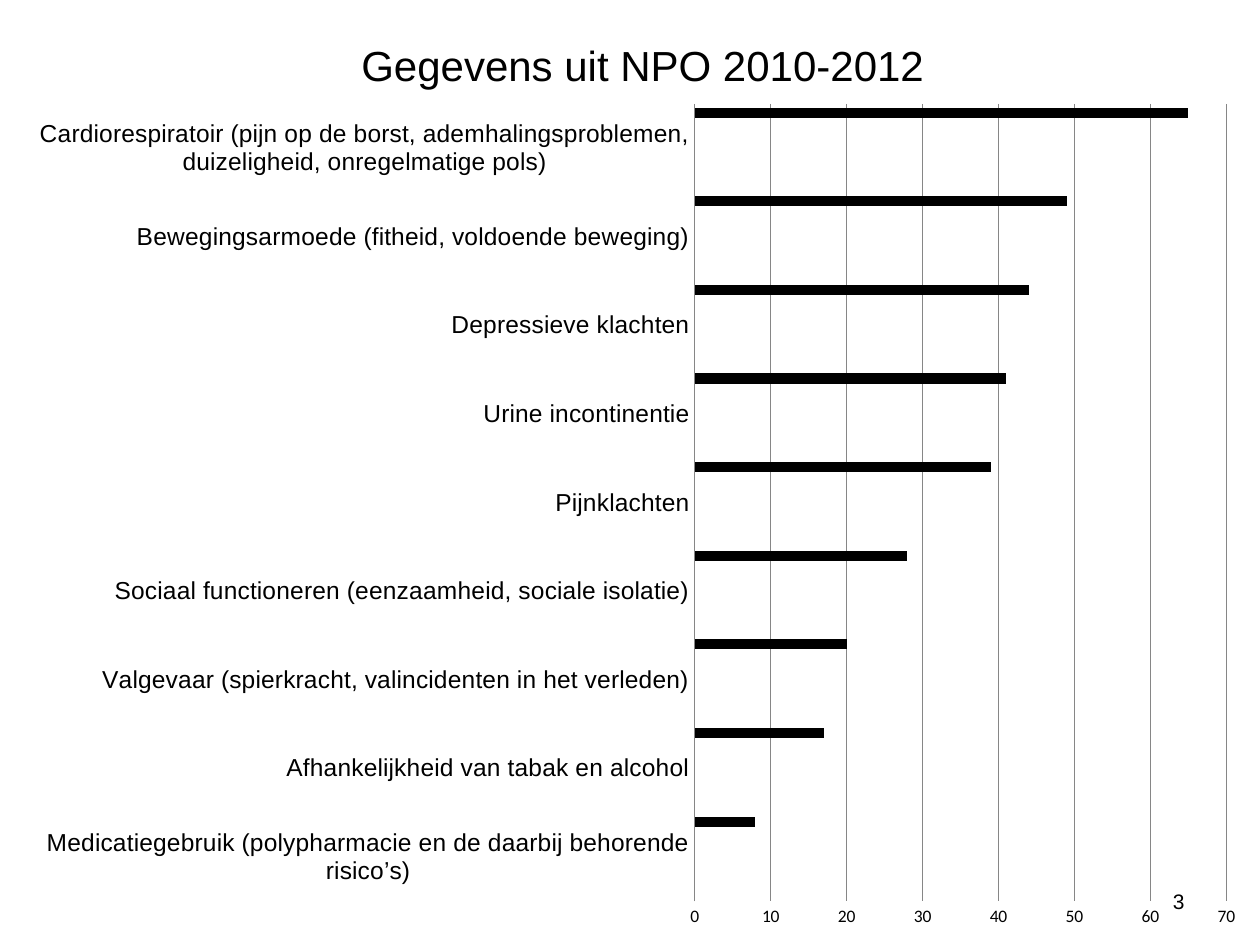
from lxml import etree
from pptx import Presentation
from pptx.chart.data import CategoryChartData
from pptx.dml.color import RGBColor
from pptx.enum.chart import XL_CHART_TYPE, XL_TICK_MARK
from pptx.enum.text import MSO_ANCHOR, PP_ALIGN
from pptx.oxml.ns import qn
from pptx.util import Inches, Pt

BAR_CLUSTERED = XL_CHART_TYPE.BAR_CLUSTERED
NO_TICK = XL_TICK_MARK.NONE
RIGHT, MIDDLE = PP_ALIGN.RIGHT, MSO_ANCHOR.MIDDLE

COLORS = {"text": "000000", "grid": "868686"}
SERIES_COLORS = ["4F81BD", "C0504D", "9BBB59", "8064A2",
                 "4BACC6", "F79646", "4F81BD", "000000"]
COMPLAINTS = [
    ("Medicatiegebruik (polypharmacie en de daarbij behorende risico’s)", 8),
    ("Afhankelijkheid van tabak en alcohol", 17),
    ("Valgevaar (spierkracht, valincidenten in het verleden)", 20),
    ("Sociaal functioneren (eenzaamheid, sociale isolatie)", 28),
    ("Pijnklachten", 39),
    ("Urine incontinentie", 41),
    ("Depressieve klachten", 44),
    ("Bewegingsarmoede (fitheid, voldoende beweging)", 49),
    ("Cardiorespiratoir (pijn op de borst, ademhalingsproblemen, "
     "duizeligheid, onregelmatige pols)", 65),
]


def color(name):
    return RGBColor.from_string(COLORS[name])


def style_font(font, size, name="Arial"):
    font.size = Pt(size)
    font.name = name
    font.bold = False
    font.color.rgb = color("text")


def style_line(line):
    line.color.rgb = color("grid")
    line.width = Pt(0.75)


def add_span(para, text, size):
    span = para.add_run()
    span.text = text
    style_font(span.font, size)


def pin_layout(parent, index, **settings):
    """Place a chart part by fractions of the chart box."""
    for old in parent.findall(qn("c:layout")):
        parent.remove(old)
    layout = etree.Element(qn("c:layout"))
    manual = etree.SubElement(layout, qn("c:manualLayout"))
    for tag, value in settings.items():
        etree.SubElement(manual, qn(f"c:{tag}")).set("val", str(value))
    parent.insert(index, layout)


def add_page_number(page, left, top, width, height):
    frame = page.shapes.add_textbox(left, top, width, height).text_frame
    frame.word_wrap = True
    frame.vertical_anchor = MIDDLE
    para = frame.paragraphs[0]
    para.alignment = RIGHT
    add_span(para, "3", 12)


def add_complaints_chart(page, left, top, width, height):
    labels, values = zip(*COMPLAINTS)
    data = CategoryChartData()
    data.categories = labels
    last = len(SERIES_COLORS)
    for number in range(1, last + 1):
        # Only the last series holds figures; the others reserve bar slots.
        data.add_series(f"Series {number}",
                        values if number == last else [None] * len(labels))
    chart = page.shapes.add_chart(BAR_CLUSTERED, left, top, width, height, data).chart
    style_font(chart.font, 10, "Calibri")
    chart.has_legend = False
    chart.has_title = True
    title = chart.chart_title
    add_span(title.text_frame.paragraphs[0], "Gegevens uit NPO 2010-2012", 24)
    title.include_in_layout = False
    pin_layout(title._element, 1, xMode="edge", yMode="edge", x=0.272, y=0.033)

    plot = chart.plots[0]
    plot.gap_width = 75
    plot.overlap = 0
    plot.vary_by_categories = False
    for series, fill_color in zip(plot.series, SERIES_COLORS):
        series.format.fill.solid()
        series.format.fill.fore_color.rgb = RGBColor.from_string(fill_color)

    for axis in (chart.category_axis, chart.value_axis):
        axis.major_tick_mark = axis.minor_tick_mark = NO_TICK
    style_font(chart.category_axis.tick_labels.font, 14)
    style_line(chart.category_axis.format.line)

    value_axis = chart.value_axis
    value_axis.minimum_scale, value_axis.maximum_scale = 0, 70
    value_axis.major_unit = 10
    value_axis.tick_labels.number_format = "0"
    value_axis.tick_labels.number_format_is_linked = False
    value_axis.format.line.fill.background()
    value_axis.has_major_gridlines = True
    style_line(value_axis.major_gridlines.format.line)
    pin_layout(plot._element.getparent(), 0, layoutTarget="inner",
               xMode="edge", yMode="edge", x=0.546, y=0.11, w=0.427, h=0.844)


def main():
    deck = Presentation()
    deck.slide_width, deck.slide_height = Inches(10), Inches(7.5)
    page = deck.slides.add_slide(deck.slide_layouts[6])
    add_page_number(page, Inches(7.17), Inches(6.95), Inches(2.33), Inches(0.4))
    add_complaints_chart(page, Inches(0.12), Inches(0), Inches(9.88), Inches(7.5))
    deck.save("out.pptx")


if __name__ == "__main__":
    main()
